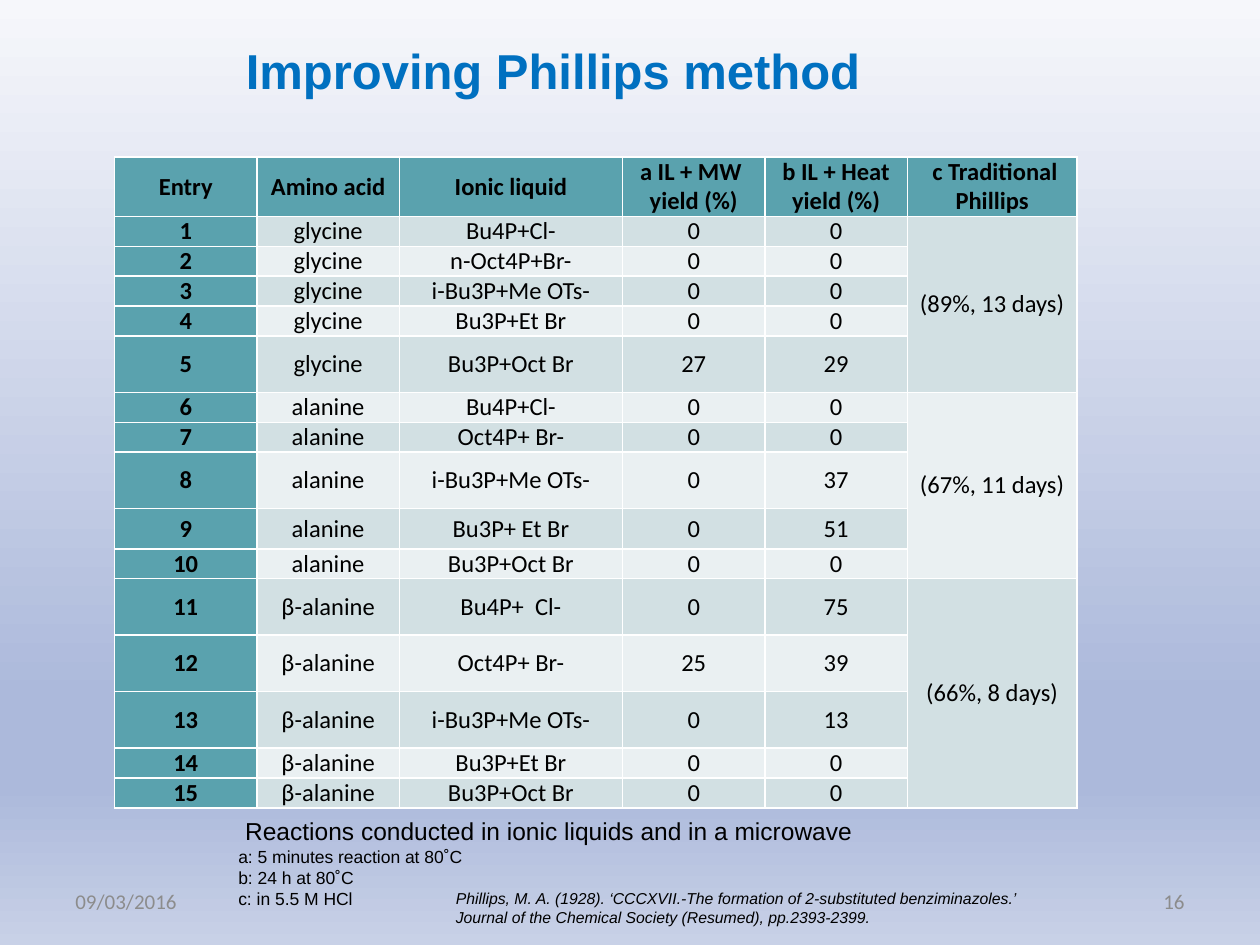
from lxml.etree import SubElement as Sub
from pptx import Presentation
from pptx.dml.color import RGBColor as RGB
from pptx.enum.text import MSO_ANCHOR as Anchor, MSO_AUTO_SIZE as Fit, PP_ALIGN as Align
from pptx.oxml.ns import qn
from pptx.util import Cm, Pt

BLACK = RGB(0x00, 0x00, 0x00)
BLUE = RGB(0x00, 0x70, 0xC0)
GRAY = RGB(0x8C, 0x8C, 0x8C)
TEAL = RGB(0x5A, 0xA2, 0xAE)
DARK = RGB(0xD2, 0xE0, 0xE3)
LIGHT = RGB(0xEA, 0xF0, 0xF2)
SKY = [(0, RGB(0xF6, 0xF7, 0xFB)), (74, RGB(0xAC, 0xB9, 0xDB)),
       (83, RGB(0xAC, 0xB9, 0xDB)), (100, RGB(0xC8, 0xD1, 0xE7))]


def put(frame, *lines, size=14, color=BLACK, font="Calibri", bold=False,
        italic=False, align=Align.LEFT):
    for n, line in enumerate(lines):
        para = frame.add_paragraph() if n else frame.paragraphs[0]
        para.text = line
        para.alignment = align
        para.space_before = Pt(0)
        for run in para.runs:
            face = run.font
            face.size, face.name, face.color.rgb = Pt(size), font, color
            face.bold, face.italic = bold, italic


def place(shape, left, top, width, height, anchor=Anchor.TOP):
    shape.left, shape.top = Cm(left), Cm(top)
    shape.width, shape.height = Cm(width), Cm(height)
    frame = shape.text_frame
    frame.word_wrap = True
    frame.auto_size = Fit.NONE
    frame.vertical_anchor = anchor
    return frame


deck = Presentation()
deck.slide_width, deck.slide_height = Cm(25.4), Cm(19.05)
slide = deck.slides.add_slide(deck.slide_layouts[1])
shapes = slide.shapes

back = slide.background.fill
back.gradient()
back.gradient_angle = 270
stops = slide.element.xpath(".//p:bg//a:gsLst")[0]
for stop in list(stops):
    stops.remove(stop)
for pos, color in SKY:
    stop = Sub(stops, qn("a:gs"), pos=str(pos * 1000))
    Sub(stop, qn("a:srgbClr"), val=str(color))

title = place(shapes.title, 3.71, 0.69, 14.88, 1.45)
put(title, "Improving Phillips method", size=28, color=BLUE, font="Arial",
    bold=True, align=Align.CENTER)

heads = ["Entry", "Amino acid", "Ionic liquid", "a IL + MW \vyield (%)",
         " b IL + Heat \vyield (%)", " c Traditional Phillips"]
groups = [
    ("glycine", "(89%, 13 days)", [
        ("Bu4P+Cl-", 0, 0, 0.6), ("n-Oct4P+Br-", 0, 0, 0.6),
        ("i-Bu3P+Me OTs-", 0, 0, 0.6), ("Bu3P+Et Br", 0, 0, 0.6),
        ("Bu3P+Oct Br", 27, 29, 1.14)]),
    ("alanine", "(67%, 11 days)", [
        ("Bu4P+Cl-", 0, 0, 0.6), ("Oct4P+ Br-", 0, 0, 0.6),
        ("i-Bu3P+Me OTs-", 0, 37, 1.14), ("Bu3P+ Et Br", 0, 51, 0.81),
        ("Bu3P+Oct Br", 0, 0, 0.6)]),
    ("β-alanine", "(66%, 8 days)", [
        ("Bu4P+  Cl-", 0, 75, 1.14), ("Oct4P+ Br-", 25, 39, 1.14),
        ("i-Bu3P+Me OTs-", 0, 13, 1.14), ("Bu3P+Et Br", 0, 0, 0.6),
        ("Bu3P+Oct Br", 0, 0, 0.6)]),
]
rows, tall = [heads], [1.19]
for acid, yields, tests in groups:
    for n, (salt, wave, heat, high) in enumerate(tests):
        rows.append([str(len(rows)), acid, salt, str(wave), str(heat),
                     "" if n else yields])
        tall.append(high)

table = shapes.add_table(len(rows), len(heads), Cm(2.31), Cm(3.16),
                         Cm(19.4), Cm(13.1)).table
table.first_col = True
for col, wide in zip(table.columns, [2.87, 2.87, 4.5, 2.87, 2.87, 3.42]):
    col.width = Cm(wide)
for r, row in enumerate(rows):
    table.rows[r].height = Cm(tall[r])
    for c, text in enumerate(row):
        cell = table.cell(r, c)
        head = r == 0 or c == 0
        cell.fill.solid()
        cell.fill.fore_color.rgb = TEAL if head else DARK if r % 2 else LIGHT
        cell.vertical_anchor = Anchor.MIDDLE
        cell.margin_left = cell.margin_right = Cm(0.18)
        cell.margin_top = cell.margin_bottom = Cm(0)
        put(cell.text_frame, text, bold=head, align=Align.CENTER)
for r in range(1, len(rows), 5):
    table.cell(r, 5).merge(table.cell(r + 4, 5))

notes = place(slide.placeholders[1], 4.55, 16.33, 18.8, 2.6)
put(notes, " Reactions conducted in ionic liquids and in a microwave",
    "a: 5 minutes reaction at 80˚C", "b: 24 h at 80˚C", "c: in 5.5 M HCl",
    size=10, font="Arial")
notes.paragraphs[0].runs[0].font.size = Pt(14)
for para in notes.paragraphs:
    props = para._p.get_or_add_pPr()
    props.set("marL", "0")
    props.set("indent", "0")
    Sub(props, qn("a:buNone"))

for text, left, align in [("09/03/2016", 1.27, Align.LEFT), ("16", 18.2, Align.RIGHT)]:
    box = shapes.add_textbox(0, 0, 0, 0)
    put(place(box, left, 17.66, 5.93, 1.01, Anchor.MIDDLE), text,
        size=12, color=GRAY, align=align)

cite = shapes.add_textbox(0, 0, 0, 0)
put(place(cite, 8.94, 17.8, 12.7, 1.02),
    "Phillips, M. A. (1928). ‘CCCXVII.-The formation of 2-substituted "
    "benziminazoles.’ Journal of the Chemical Society (Resumed), pp.2393-2399.",
    size=9, font="Arial", italic=True)

deck.save("out.pptx")
